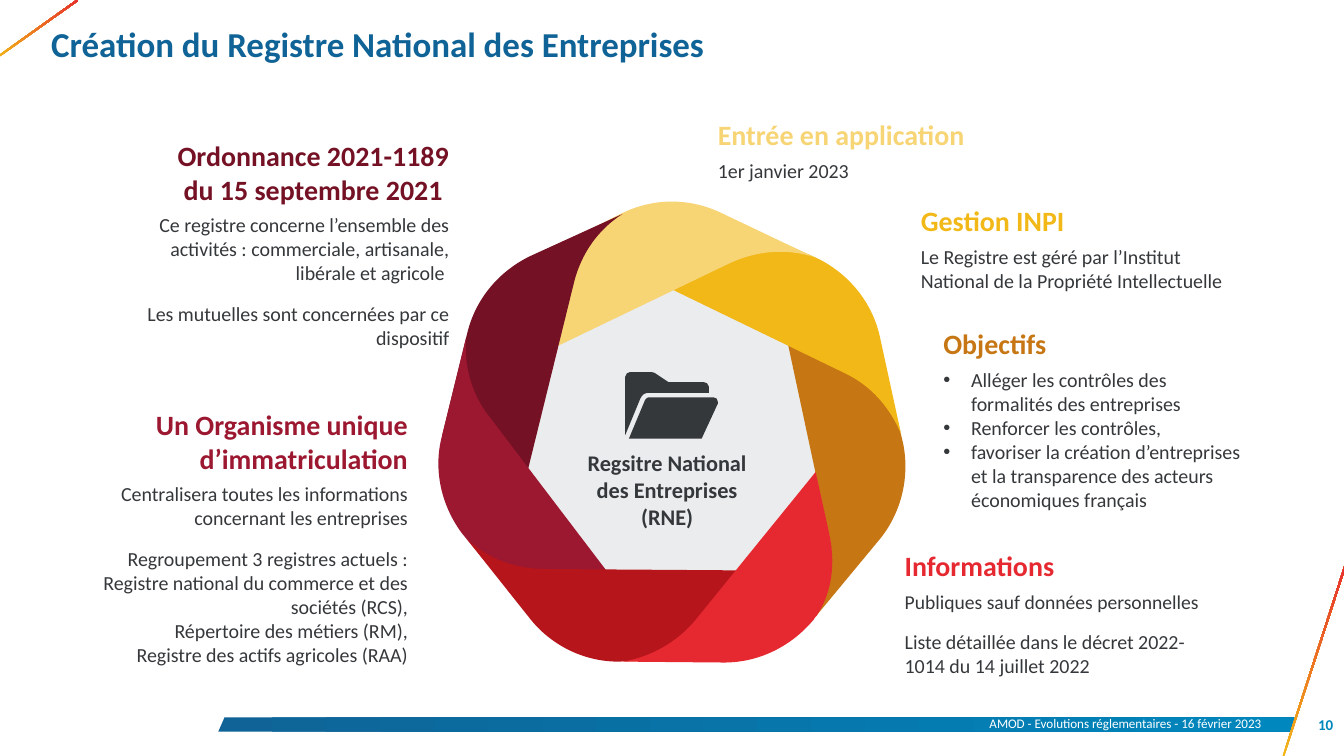
from lxml.etree import SubElement
from pptx import Presentation
from pptx.dml.color import RGBColor
from pptx.enum.shapes import MSO_SHAPE
from pptx.enum.text import MSO_ANCHOR, PP_ALIGN
from pptx.oxml.ns import qn
from pptx.util import Inches, Pt

# Content
TITLE = "Création du Registre National des Entreprises"
CENTRE = "Regsitre National des Entreprises (RNE)"
FOOTER = "AMOD - Evolutions réglementaires - 16 février 2023"
PAGE = "10"
FONT, DARK = "Calibri", "35383B"
BLUE, LIGHT_BLUE, YELLOW, RED = "0F6396", "0087BD", "F2B818", "E62930"
LEFT, RIGHT, CENTER = PP_ALIGN.LEFT, PP_ALIGN.RIGHT, PP_ALIGN.CENTER
GAP = 13.5

# heading, colour, left, top, heading height, body height, alignment, bulleted,
# body paragraphs as (space before, text) with a font size where it is not 16
TOPICS = [
    ("Ordonnance 2021-1189 du 15 septembre 2021 ", "751124", 1.6, 1.49, 0.85, 1.63, RIGHT, False, [
        (0, "Ce registre concerne l’ensemble des activités : commerciale, artisanale, libérale et agricole "),
        (GAP, "Les mutuelles sont concernées par ce dispositif")]),
    ("Un Organisme unique d’immatriculation", "9C1730", 1.14, 4.47, 0.86, 2.61, RIGHT, False, [
        (0, "Centralisera toutes les informations concernant les entreprises"),
        (GAP, "Regroupement 3 registres actuels :"),
        (0, "Registre national du commerce et des sociétés (RCS),"),
        (0, "Répertoire des métiers (RM),"),
        (0, "Registre des actifs agricoles (RAA)")]),
    ("Entrée en application", "F7D474", 7.99, 1.25, 0.48, 0.37, LEFT, False, [
        (0, "1er janvier 2023")]),
    ("Gestion INPI", YELLOW, 10.25, 2.21, 0.48, 0.64, LEFT, False, [
        (0, "Le Registre est géré par l’Institut National de la Propriété Intellectuelle")]),
    ("Objectifs", "C77614", 10.5, 3.58, 0.48, 1.72, LEFT, True, [
        (0, "Alléger les contrôles des formalités des entreprises"),
        (0, "Renforcer les contrôles,"),
        (0, "favoriser la création d’entreprises et la transparence des acteurs économiques français")]),
    ("Informations", RED, 10.07, 6.05, 0.48, 1.09, LEFT, False, [
        (0, "Publiques sauf données personnelles", 15.7),
        (GAP, "Liste détaillée dans le décret 2022-1014 du 14 juillet 2022")]),
]

# Outlines in inches: a pair is a straight step, six numbers are a Bézier step
FOOTER_BAND = [(2.5, 7.98), (14.43, 7.98), (14.37, 8.14), (2.43, 8.14)]
HEPTAGON = [
    (6.92, 2.79), (6.19, 3.14), (5.84, 3.31, 5.59, 3.63, 5.5, 4),
    (5.32, 4.8), (5.24, 5.17, 5.33, 5.57, 5.57, 5.87),
    (6.07, 6.51), (6.32, 6.81, 6.68, 6.99, 7.07, 6.99),
    (7.88, 6.99), (8.27, 6.99, 8.63, 6.81, 8.88, 6.51),
    (9.38, 5.87), (9.62, 5.57, 9.72, 5.17, 9.63, 4.8),
    (9.45, 4), (9.36, 3.63, 9.11, 3.31, 8.76, 3.14),
    (8.03, 2.79), (7.68, 2.62, 7.27, 2.62, 6.92, 2.79)]
RIBBONS = [
    ("C77614", [(10.05, 4.92), (9.77, 3.77), (8.63, 3.17), (9.08, 5.27), (9.23, 5.95),
                (9.3, 6.27, 9.23, 6.6, 9.07, 6.87), (9.8, 5.99),
                (9.8, 5.99, 9.8, 5.99, 9.8, 5.99),
                (10.04, 5.69, 10.13, 5.29, 10.05, 4.92)]),
    (YELLOW, [(9.79, 3.73), (9.7, 3.35, 9.44, 3.04, 9.09, 2.87), (8.01, 2.39), (6.84, 2.91),
              (9.4, 4.15), (9.7, 4.29, 9.91, 4.54, 10.03, 4.83), (9.79, 3.73)]),
    ("F7D474", [(8.03, 2.37), (7.68, 2.2, 7.28, 2.2, 6.93, 2.37), (5.87, 2.9), (5.56, 4.16),
                (8.12, 2.93), (8.42, 2.79, 8.75, 2.76, 9.06, 2.86), (8.03, 2.37)]),
    ("751124", [(5.9, 2.85), (5.55, 3.02, 5.29, 3.33, 5.2, 3.71), (4.92, 4.85), (5.71, 5.9),
                (6.39, 3.14), (6.47, 2.82, 6.66, 2.55, 6.93, 2.38), (5.9, 2.85)]),
    ("9C1730", [(4.92, 4.85), (4.82, 5.22, 4.91, 5.62, 5.14, 5.93), (5.89, 6.83), (7.17, 6.9),
                (5.45, 4.64), (5.25, 4.39, 5.16, 4.07, 5.19, 3.75), (4.92, 4.85)]),
    ("B6151B", [(5.89, 6.87), (6.13, 7.18, 6.5, 7.36, 6.88, 7.36), (8.06, 7.32), (8.9, 6.35),
                (6.06, 6.33), (5.73, 6.33, 5.42, 6.21, 5.19, 5.99), (5.89, 6.87)]),
    (RED, [(9.06, 6.89), (9.06, 6.88, 9.08, 6.86, 9.09, 6.85),
           (9.27, 6.58, 9.3, 6.25, 9.23, 5.93), (9.08, 5.25), (7.74, 6.9),
           (7.53, 7.15, 7.24, 7.31, 6.93, 7.36), (8.06, 7.37),
           (8.45, 7.37, 8.81, 7.19, 9.06, 6.89)]),
]
FOLDER = [
    [(7.22, 4.37), (7.89, 4.37), (7.89, 4.3), (7.89, 4.27, 7.86, 4.25, 7.83, 4.25),
     (7.44, 4.25), (7.29, 4.15), (7.28, 4.14, 7.27, 4.14, 7.26, 4.14), (7.01, 4.14),
     (6.99, 4.14, 6.96, 4.16, 6.96, 4.19), (6.96, 4.84),
     (6.96, 4.84, 7.13, 4.43, 7.13, 4.43), (7.15, 4.39, 7.18, 4.37, 7.22, 4.37)],
    [(7.99, 4.47), (7.99, 4.44, 7.97, 4.42, 7.94, 4.42), (7.22, 4.42),
     (7.21, 4.42, 7.19, 4.43, 7.18, 4.45), (7, 4.88), (7.81, 4.88), (7.99, 4.49),
     (7.99, 4.49, 7.99, 4.48, 7.99, 4.47)],
]
# left, top, width, height, rotation
ACCENT_LINES = [(13.48, 7.31, 2.32, 0.02, 288), (-0.1, 0.3, 1.06, 0.02, 324.6)]


def color(value):
    return RGBColor.from_string(value)


def paint(shape, *colors, angle=0):
    """One colour gives a solid fill, two give a gradient."""
    shape.shadow.inherit = False
    shape.line.fill.background()
    if len(colors) == 1:
        shape.fill.solid()
        shape.fill.fore_color.rgb = color(colors[0])
        return
    shape.fill.gradient()
    shape.fill.gradient_angle = angle
    for stop, value, position in zip(shape.fill.gradient_stops, colors, (0, 1)):
        stop.color.rgb = color(value)
        stop.position = position


def pairs(step):
    return list(zip(step[::2], step[1::2]))


def sample(outline, count=20):
    """Points along the outline, which give its true extents."""
    points = [outline[0]]
    for step in outline[1:]:
        if len(step) == 2:
            points.append(step)
            continue
        controls = [points[-1], *pairs(step)]
        for t in (index / count for index in range(1, count + 1)):
            weights = ((1 - t) ** 3, 3 * t * (1 - t) ** 2, 3 * t * t * (1 - t), t ** 3)
            points.append(tuple(sum(w * c[axis] for w, c in zip(weights, controls))
                                for axis in (0, 1)))
    return [(Inches(x), Inches(y)) for x, y in points]


def add_outline(slide, outline, *colors):
    start, *rest = sample(outline)
    builder = slide.shapes.build_freeform(*start)
    builder.add_line_segments(rest, close=True)
    shape = builder.convert_to_shape()
    # Write the steps as true lines and Bézier curves within those extents
    drawing = next(shape._element.iter(qn("a:path")))
    for child in list(drawing):
        drawing.remove(child)
    for index, step in enumerate(outline):
        tag = "a:moveTo" if index == 0 else "a:lnTo" if len(step) == 2 else "a:cubicBezTo"
        node = SubElement(drawing, qn(tag))
        for x, y in pairs(step):
            SubElement(node, qn("a:pt"), x=str(Inches(x) - shape.left), y=str(Inches(y) - shape.top))
    SubElement(drawing, qn("a:close"))
    paint(shape, *colors)


def add_bullet(paragraph):
    properties = paragraph._p.get_or_add_pPr()
    properties.set("marL", str(Inches(0.31)))
    properties.set("indent", str(-Inches(0.31)))
    SubElement(properties, qn("a:buFont")).set("typeface", "Arial")
    SubElement(properties, qn("a:buChar")).set("char", "•")


def write(shape, paragraphs, size, value, bold=False, align=LEFT, anchor=MSO_ANCHOR.TOP,
          margins=(0, 0.05, 0.1, 0.05), bulleted=False):
    frame = shape.text_frame
    frame.word_wrap = True
    frame.vertical_anchor = anchor
    frame.margin_left, frame.margin_top, frame.margin_right, frame.margin_bottom = map(Inches, margins)
    for index, (space, text, *own_size) in enumerate(paragraphs):
        paragraph = frame.add_paragraph() if index else frame.paragraphs[0]
        paragraph.text = text
        paragraph.alignment = align
        paragraph.space_before = Pt(space)
        if bulleted:
            add_bullet(paragraph)
        font = paragraph.font
        font.name, font.size, font.bold = FONT, Pt(own_size[0] if own_size else size), bold
        font.color.rgb = color(value)


def add_text(slide, box, paragraphs, *args, **options):
    write(slide.shapes.add_textbox(*map(Inches, box)), paragraphs, *args, **options)


def main():
    presentation = Presentation()
    presentation.slide_width, presentation.slide_height = Inches(14.96), Inches(8.41)
    slide = presentation.slides.add_slide(presentation.slide_layouts[5])

    # Title
    title = slide.shapes.title
    title.left, title.top, title.width, title.height = map(Inches, (0.53, 0.21, 13.9, 0.9))
    write(title, [(0, TITLE)], 28, BLUE, bold=True, margins=(0.04,) * 4)

    # Footer band and accent lines
    add_outline(slide, FOOTER_BAND, BLUE, LIGHT_BLUE)
    for *box, rotation in ACCENT_LINES:
        line = slide.shapes.add_shape(MSO_SHAPE.RECTANGLE, *map(Inches, box))
        line.rotation = rotation
        paint(line, YELLOW, RED, angle=320)

    # Heptagon with its ribbons and folder
    add_outline(slide, HEPTAGON, "EBECED")
    for value, outline in RIBBONS:
        add_outline(slide, outline, value)
    for outline in FOLDER:
        add_outline(slide, outline, DARK)
    add_text(slide, (6.4, 4.94, 2.15, 1.01), [(0, CENTRE)], 17.9, DARK, bold=True,
             align=CENTER, anchor=MSO_ANCHOR.MIDDLE)

    # Topics: each body starts just under its heading
    for heading, value, left, top, head_height, body_height, align, bulleted, body in TOPICS:
        add_text(slide, (left, top, 3.5, head_height), [(0, heading)], 22.4, value,
                 bold=True, align=align, anchor=MSO_ANCHOR.BOTTOM)
        add_text(slide, (left, top + head_height - 0.02, 3.5, body_height), body, 16, DARK,
                 align=align, bulleted=bulleted)

    # Footer text and page number
    add_text(slide, (3.12, 7.91, 11.02, 0.27), [(0, FOOTER)], 10.5, "FFFFFF", align=RIGHT,
             anchor=MSO_ANCHOR.MIDDLE, margins=(0.1, 0.05, 0.1, 0.05))
    add_text(slide, (14.27, 7.94, 0.57, 0.23), [(0, PAGE)], 12, LIGHT_BLUE, bold=True,
             align=RIGHT, anchor=MSO_ANCHOR.MIDDLE, margins=(0,) * 4)

    presentation.save("out.pptx")


if __name__ == "__main__":
    main()
